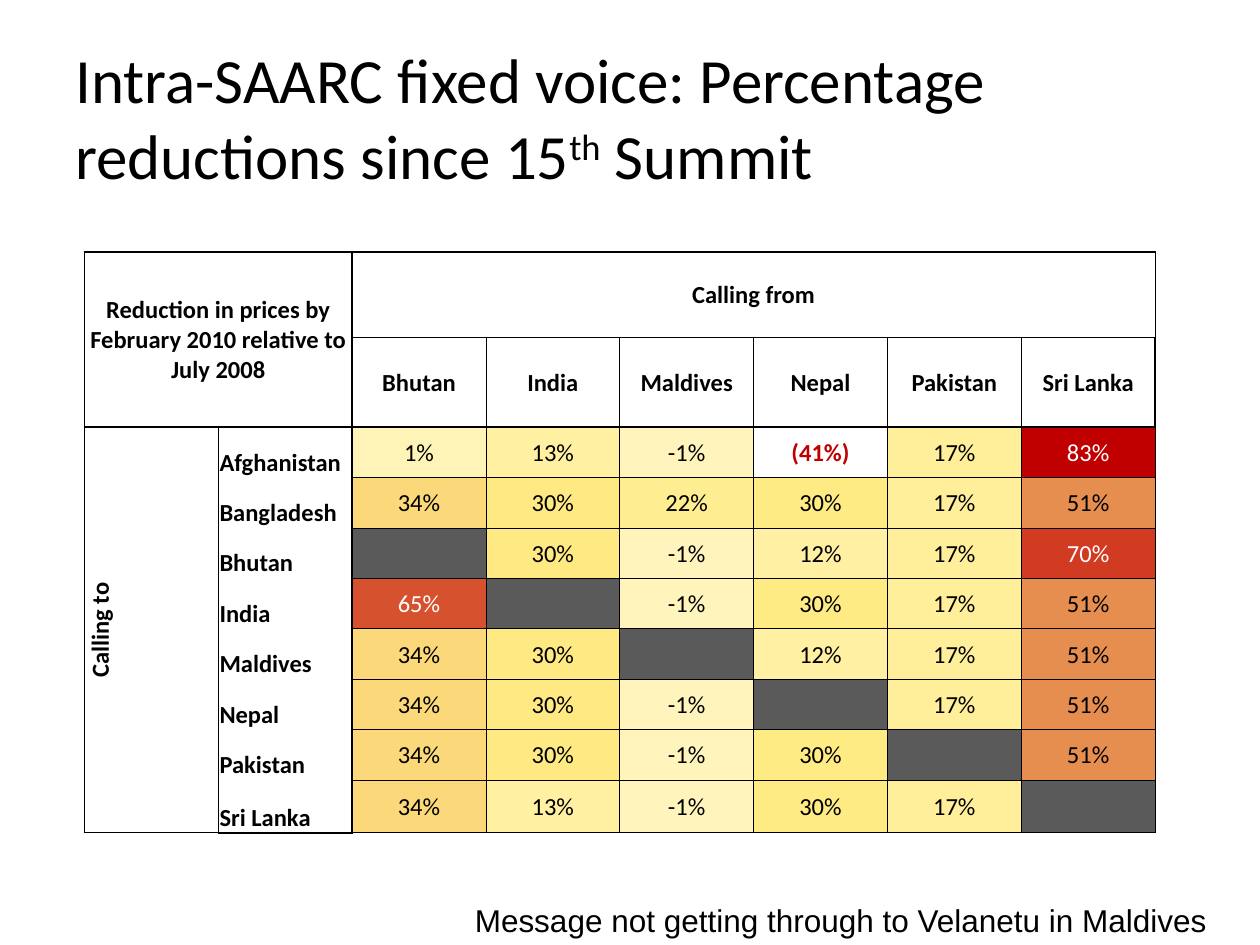
import pptx
import pptx.util
import pptx.dml.color
import pptx.enum.text
import pptx.oxml
import pptx.oxml.ns

Pt = pptx.util.Pt
RGB = pptx.dml.color.RGBColor.from_string
ALIGN = pptx.enum.text.PP_ALIGN
ANCHOR = pptx.enum.text.MSO_ANCHOR
W, H = pptx.util.Inches(10), pptx.util.Inches(7.5)

COLORS = {"text": "000000", "light": "FFFFFF", "alert": "C00000", "line": "000000"}
HEAT = {
    "": "5A5A5A", "(41%)": "FFFFFF", "-1%": "FFF4BB", "1%": "FFF4B7",
    "12%": "FFF0A3", "13%": "FFF0A2", "17%": "FFEF9A", "22%": "FFEE91",
    "30%": "FFEB84", "India 30%": "FFE983", "34%": "FBD97A", "51%": "E68D50",
    "65%": "D6522E", "70%": "D03B21", "83%": "C00000",
}
TEXT_COLORS = {"(41%)": "alert", "65%": "light", "70%": "light", "83%": "light"}

CALLING_FROM = ["Bhutan", "India", "Maldives", "Nepal", "Pakistan", "Sri Lanka"]
REDUCTIONS = {
    "Afghanistan": ["1%", "13%", "-1%", "(41%)", "17%", "83%"],
    "Bangladesh": ["34%", "30%", "22%", "30%", "17%", "51%"],
    "Bhutan": ["", "30%", "-1%", "12%", "17%", "70%"],
    "India": ["65%", "", "-1%", "30%", "17%", "51%"],
    "Maldives": ["34%", "30%", "", "12%", "17%", "51%"],
    "Nepal": ["34%", "30%", "-1%", "", "17%", "51%"],
    "Pakistan": ["34%", "30%", "-1%", "30%", "", "51%"],
    "Sri Lanka": ["34%", "13%", "-1%", "30%", "17%", ""],
}
HEAD_ROWS, SIDE_COLS = 2, 2
ROWS = HEAD_ROWS + len(REDUCTIONS)
COLS = SIDE_COLS + len(CALLING_FROM)
ROW_SHARES = [0.68] * HEAD_ROWS + [0.4] * (len(REDUCTIONS) - 1) + [0.42]


def share(x, y, w, h):
    return [int(v) for v in (x * W, y * H, w * W, h * H)]


def set_all(obj, values):
    for name, value in values.items():
        setattr(obj, name, value)


def add_run(p, text, size, font="Calibri", color="text", bold=False):
    r = p.add_run()
    r.text = text
    set_all(r.font, {"size": Pt(size), "name": font, "bold": bold})
    r.font.color.rgb = RGB(COLORS[color])
    return r


def add_title(s, box):
    tf = s.shapes.add_textbox(*box).text_frame
    set_all(tf, {"word_wrap": True, "vertical_anchor": ANCHOR.MIDDLE})
    p = tf.paragraphs[0]
    add_run(p, "Intra-SAARC fixed voice: Percentage reductions since 15", 36)
    th = add_run(p, "th", 36)
    th._r.get_or_add_rPr().set("baseline", "30000")
    add_run(p, " Summit", 36)


def add_message(s, box):
    tf = s.shapes.add_textbox(*box).text_frame
    set_all(tf, {"word_wrap": False,
                 "auto_size": pptx.enum.text.MSO_AUTO_SIZE.SHAPE_TO_FIT_TEXT})
    add_run(tf.paragraphs[0], "Message not getting through to Velanetu in Maldives",
            18, "Arial")


def border_widths(row, col):
    side, head = col < SIDE_COLS, row < HEAD_ROWS
    last_row, last_col = row == ROWS - 1, col == COLS - 1
    widths = {
        "L": 1 if col <= SIDE_COLS else 0.5,
        "R": 1 if side or (head and last_col) else 0.5,
        "T": 1 if row <= HEAD_ROWS else 0.5,
        "B": 1 if head or (side and last_row) else 0.5,
    }
    if col == 1 and not head:
        widths["T"] = 1 if row == HEAD_ROWS else 0
        widths["B"] = 1 if last_row else 0
    return widths


def set_borders(cell, widths):
    tc_pr = cell._tc.get_or_add_tcPr()
    ns = pptx.oxml.ns.nsdecls("a")
    for side, width in widths.items():
        fill = (f'<a:solidFill><a:srgbClr val="{COLORS["line"]}"/></a:solidFill>'
                if width else "<a:noFill/>")
        tc_pr.append(pptx.oxml.parse_xml(
            f'<a:ln{side} {ns} w="{int(Pt(width))}">{fill}</a:ln{side}>'))


def fill_cell(cell, text, color="text", bold=True, fill=None,
              align=ALIGN.CENTER, anchor=ANCHOR.MIDDLE):
    cell.vertical_anchor = anchor
    p = cell.text_frame.paragraphs[0]
    p.alignment = align
    if text:
        add_run(p, text, 14, color=color, bold=bold)
    if fill:
        cell.fill.solid()
        cell.fill.fore_color.rgb = RGB(fill)


def add_price_table(s, box):
    x, y, w, h = box
    table = s.shapes.add_table(ROWS, COLS, x, y, w, h).table
    set_all(table, {"first_row": False, "horz_banding": False})
    for col in table.columns:
        col.width = w // COLS
    for row, part in zip(table.rows, ROW_SHARES):
        row.height = int(h * part / sum(ROW_SHARES))

    inset = pptx.util.Inches(0.01)
    for i in range(ROWS):
        for j in range(COLS):
            cell = table.cell(i, j)
            set_all(cell, {"margin_left": inset, "margin_right": inset,
                           "margin_top": inset, "margin_bottom": 0})
            set_borders(cell, border_widths(i, j))
            cell.fill.background()

    corner, top, side = table.cell(0, 0), table.cell(0, SIDE_COLS), table.cell(HEAD_ROWS, 0)
    corner.merge(table.cell(HEAD_ROWS - 1, SIDE_COLS - 1))
    top.merge(table.cell(0, COLS - 1))
    side.merge(table.cell(ROWS - 1, 0))
    fill_cell(corner, "Reduction in prices by February 2010 relative to July 2008")
    fill_cell(top, "Calling from")
    fill_cell(side, "Calling to")
    side._tc.get_or_add_tcPr().set("vert", "vert270")

    for j, origin in enumerate(CALLING_FROM, SIDE_COLS):
        fill_cell(table.cell(1, j), origin)
    for i, (country, values) in enumerate(REDUCTIONS.items(), HEAD_ROWS):
        fill_cell(table.cell(i, 1), country, align=ALIGN.LEFT, anchor=ANCHOR.BOTTOM)
        for j, (origin, value) in enumerate(zip(CALLING_FROM, values), SIDE_COLS):
            fill_cell(table.cell(i, j), value, TEXT_COLORS.get(value, "text"),
                      bold=value.startswith("("),
                      fill=HEAT.get(f"{origin} {value}", HEAT[value]))


def main():
    prs = pptx.Presentation()
    set_all(prs, {"slide_width": W, "slide_height": H})
    s = prs.slides.add_slide(prs.slide_layouts[6])
    add_title(s, share(0.05, 0.04, 0.9, 1 / 6))
    add_price_table(s, share(0.067, 2 / 7.5, 0.85, 4.58 / 7.5))
    add_message(s, share(0.367, 7.1 / 7.5, 0.611, 0.4 / 7.5))
    prs.save("out.pptx")


if __name__ == "__main__":
    main()
